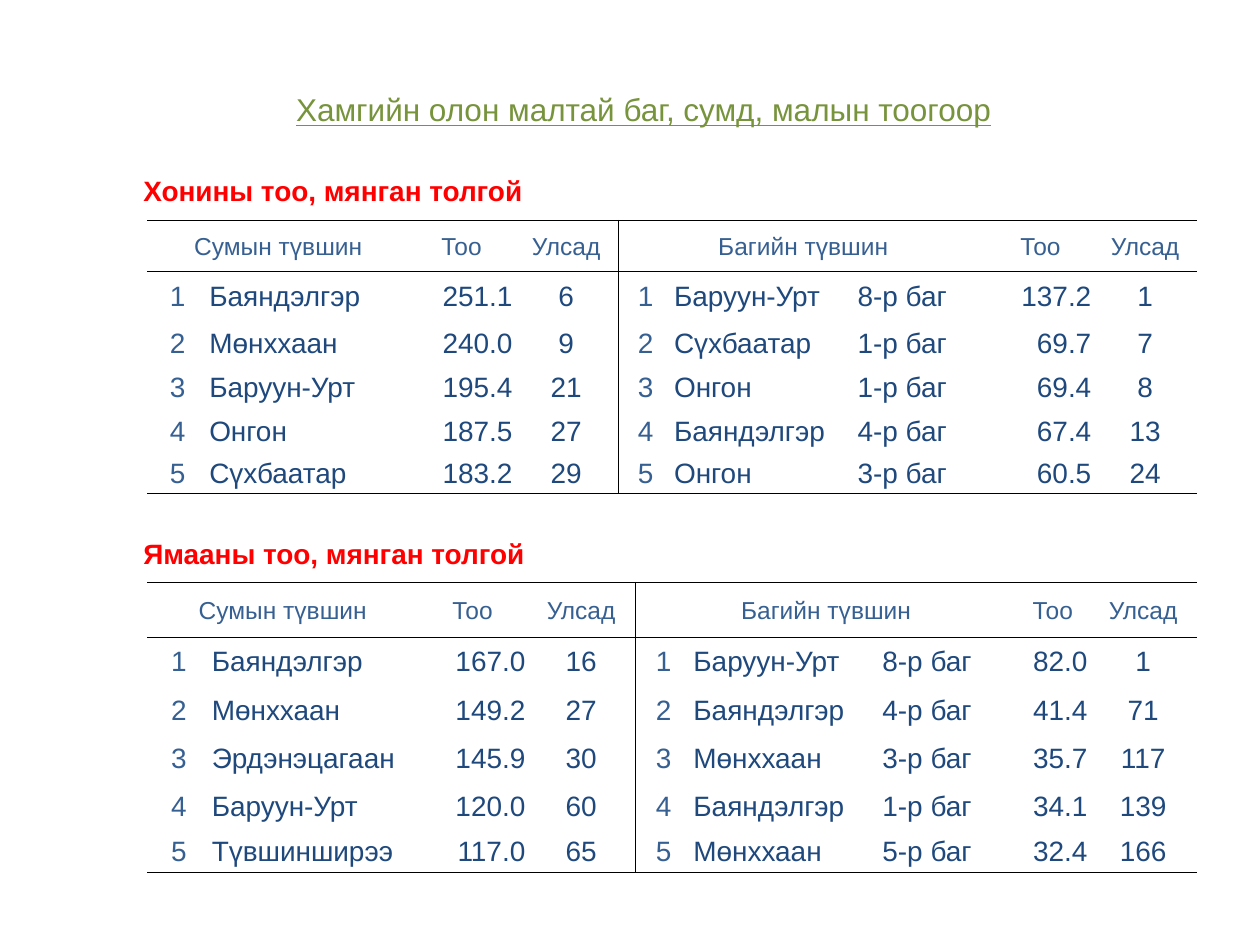
from lxml import etree
from pptx import Presentation
from pptx import util as u
from pptx.dml.color import RGBColor
from pptx.enum import text
from pptx.oxml import ns

FONT = "Arial"
GREEN, RED, BLUE, NAVY, BLACK = "77933C", "FF0000", "376092", "1F497D", "000000"
NO_STYLE = "{2D5ABB26-0587-4C30-8999-92F81FD0307C}"
LEFT, CENTER, RIGHT = text.PP_ALIGN.LEFT, text.PP_ALIGN.CENTER, text.PP_ALIGN.RIGHT

HEADER = ["Сумын түвшин", "", "Тоо", "Улсад", "Багийн түвшин", "", "", "Тоо", "Улсад"]
HEADER_SPANS = [(0, 1), (4, 6)]
ALIGNS = [CENTER, LEFT, RIGHT, CENTER, CENTER, LEFT, LEFT, RIGHT, CENTER]
RANK_COLUMNS = (0, 4)
DIVIDER = 4
TABLE_LEFT = 2.97

TITLE = ("Хамгийн олон малтай баг, сумд, малын тоогоор", 5.72, 1.7, 1.02,
         {"size": u.Pt(18), "underline": True}, GREEN)
HEADING_FORMAT = {"size": u.Pt(16), "bold": True}

SECTIONS = [
    {
        "heading": "Хонины тоо, мянган толгой",
        "heading_top": 3.38,
        "table_top": 4.44,
        "widths": [1.22, 4.06, 2.11, 2.11, 1.09, 3.7, 2.66, 2.11, 2.11],
        "heights": [1.03, 1, 0.89, 0.89, 0.89, 0.8],
        "rows": [
            ("Баяндэлгэр", "251.1", "6", "Баруун-Урт", "8-р баг", "137.2", "1"),
            ("Мөнххаан", "240.0", "9", "Сүхбаатар", "1-р баг", "69.7", "7"),
            ("Баруун-Урт", "195.4", "21", "Онгон", "1-р баг", "69.4", "8"),
            ("Онгон", "187.5", "27", "Баяндэлгэр", "4-р баг", "67.4", "13"),
            ("Сүхбаатар", "183.2", "29", "Онгон", "3-р баг", "60.5", "24"),
        ],
    },
    {
        "heading": "Ямааны тоо, мянган толгой",
        "heading_top": 10.69,
        "table_top": 11.74,
        "widths": [1.27, 4.19, 2.19, 2.19, 1.14, 3.81, 2.74, 1.45, 2.19],
        "heights": [1.11, 0.97, 0.97, 0.97, 0.97, 0.85],
        "rows": [
            ("Баяндэлгэр", "167.0", "16", "Баруун-Урт", "8-р баг", "82.0", "1"),
            ("Мөнххаан", "149.2", "27", "Баяндэлгэр", "4-р баг", "41.4", "71"),
            ("Эрдэнэцагаан", "145.9", "30", "Мөнххаан", "3-р баг", "35.7", "117"),
            ("Баруун-Урт", "120.0", "60", "Баяндэлгэр", "1-р баг", "34.1", "139"),
            ("Түвшинширээ", "117.0", "65", "Мөнххаан", "5-р баг", "32.4", "166"),
        ],
    },
]


def color(value):
    return RGBColor.from_string(value)


def write(para, words, formats, shade):
    span = para.add_run()
    span.text = words
    span.font.color.rgb = color(shade)
    for name, value in {"name": FONT, **formats}.items():
        setattr(span.font, name, value)


def add_label(page, words, left, top, height, formats, shade):
    box = page.shapes.add_textbox(u.Cm(left), u.Cm(top), u.Cm(14.82), u.Cm(height))
    box.text_frame.word_wrap = True
    box.text_frame.auto_size = text.MSO_AUTO_SIZE.SHAPE_TO_FIT_TEXT
    write(box.text_frame.paragraphs[0], words, formats, shade)


def add_borders(cell, row, column, last_row):
    sides = {
        "lnL": column == DIVIDER,
        "lnR": column == DIVIDER - 1,
        "lnT": row <= 1,
        "lnB": row in (0, last_row),
    }
    properties = cell._tc.get_or_add_tcPr()
    for tag, shown in sides.items():
        line = etree.SubElement(properties, ns.qn("a:" + tag), w=str(u.Pt(0.5)))
        if shown:
            fill = etree.SubElement(line, ns.qn("a:solidFill"))
            etree.SubElement(fill, ns.qn("a:srgbClr"), val=BLACK)
        else:
            etree.SubElement(line, ns.qn("a:noFill"))


def format_cell(cell):
    formats = {
        "margin_left": u.Cm(0.03),
        "margin_right": u.Cm(0.03),
        "margin_top": u.Cm(0.03),
        "margin_bottom": 0,
        "vertical_anchor": text.MSO_ANCHOR.MIDDLE,
    }
    for name, value in formats.items():
        setattr(cell, name, value)


def add_ranking(page, section):
    widths, heights = section["widths"], section["heights"]
    frame = page.shapes.add_table(
        len(heights), len(widths), u.Cm(TABLE_LEFT), u.Cm(section["table_top"]),
        u.Cm(sum(widths)), u.Cm(sum(heights)))
    table = frame.table
    table.first_row = table.horz_banding = False
    table._tbl.tblPr.find(ns.qn("a:tableStyleId")).text = NO_STYLE
    for column, width in zip(table.columns, widths):
        column.width = u.Cm(width)
    for row, height in zip(table.rows, heights):
        row.height = u.Cm(height)
    for first, last in HEADER_SPANS:
        table.cell(0, first).merge(table.cell(0, last))

    body = [(str(rank), *row[:3], str(rank), *row[3:])
            for rank, row in enumerate(section["rows"], 1)]
    for r, values in enumerate([HEADER, *body]):
        for c, words in enumerate(values):
            cell = table.cell(r, c)
            format_cell(cell)
            add_borders(cell, r, c, len(body))
            cell.fill.background()
            if words:
                para = cell.text_frame.paragraphs[0]
                para.alignment = ALIGNS[c] if r else CENTER
                shade = NAVY if r and c not in RANK_COLUMNS else BLUE
                write(para, words, {"size": u.Pt(16 if r else 14)}, shade)


def main():
    deck = Presentation()
    deck.slide_width, deck.slide_height = u.Cm(25.4), u.Cm(19.05)
    page = deck.slides.add_slide(deck.slide_layouts[6])
    add_label(page, *TITLE)
    for section in SECTIONS:
        add_label(page, section["heading"], 2.64, section["heading_top"], 0.94,
                  HEADING_FORMAT, RED)
        add_ranking(page, section)
    deck.save("out.pptx")


if __name__ == "__main__":
    main()
